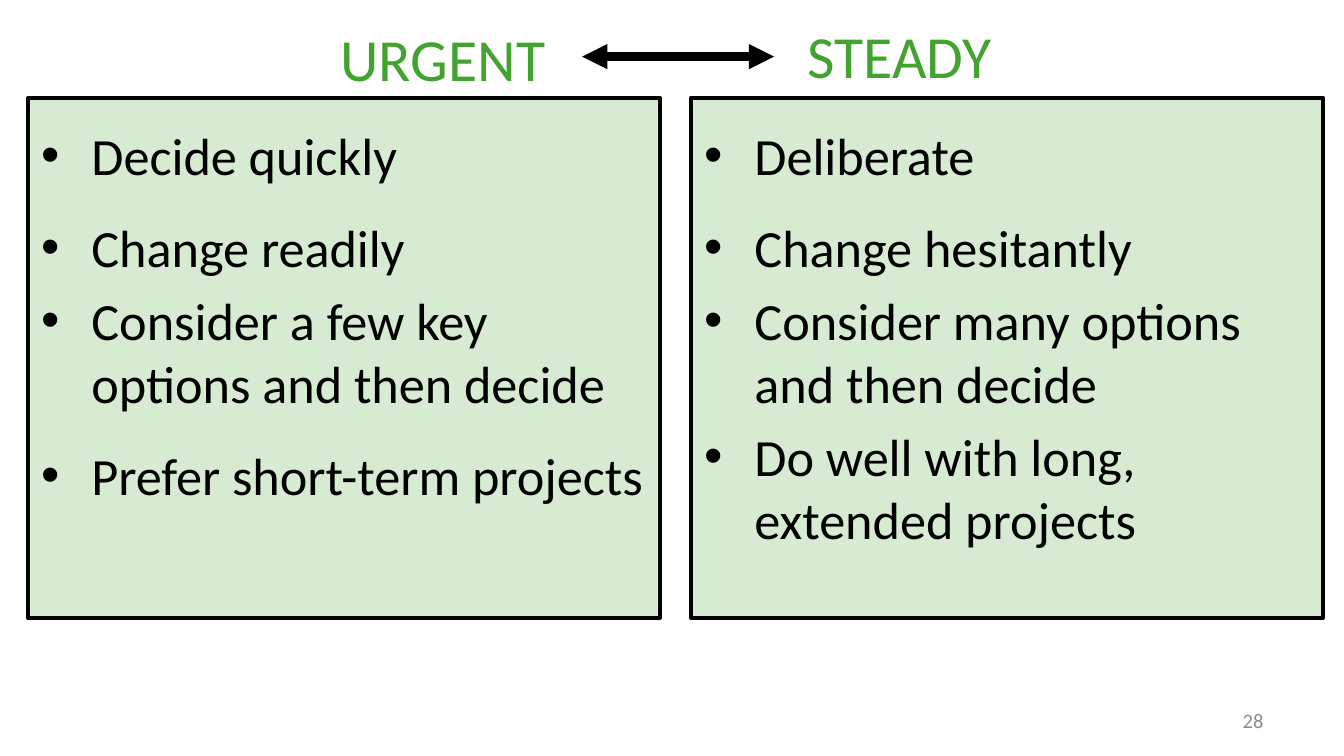
from lxml.etree import SubElement
from pptx import Presentation
from pptx.dml.color import RGBColor
from pptx.enum.shapes import MSO_CONNECTOR as Connector, MSO_SHAPE as Shape
from pptx.enum.text import MSO_ANCHOR as Anchor, PP_ALIGN as Align
from pptx.oxml.ns import qn
from pptx.util import Cm, Pt

GREEN, BLACK, GREY = "42A42F", "000000", "8C8C8C"
PANEL_LEFT, PANEL_STEP = 0.53, 12.53

# Each bullet is its wording and its line spacing.
URGENT = [
    ("Decide quickly", 1.3),
    ("Change readily", 1.3),
    ("Consider a few key options and then decide", 1.0),
    ("Prefer short-term projects", 1.3),
]
STEADY = [
    ("Deliberate", 1.3),
    ("Change hesitantly", 1.3),
    ("Consider many options and then decide", 1.0),
    ("Do well with long, extended projects", 1.0),
]


def color(value):
    """Turn a hex string into a colour."""
    return RGBColor.from_string(value)


def apply(target, formats):
    """Set each named attribute on the target."""
    for name, value in formats.items():
        setattr(target, name, value)


def add_span(para, text, size, tint):
    """Add a run of text to a paragraph."""
    span = para.add_run()
    span.text = text
    apply(span.font, {"name": "Calibri", "size": Pt(size)})
    span.font.color.rgb = color(tint)


def add_bullet(para, text, spacing, first):
    """Write one bulleted paragraph with a hanging indent."""
    props = para._p.get_or_add_pPr()
    props.set("marL", str(Cm(0.95)))
    props.set("indent", str(-Cm(0.95)))
    SubElement(props, qn("a:buFont"), typeface="Arial")
    SubElement(props, qn("a:buChar"), char="•")
    apply(para, {"alignment": Align.LEFT, "line_spacing": spacing,
                 "space_before": Pt(0 if first else 5.6)})
    add_span(para, text, 28, BLACK)


def add_panel(page, left, bullets):
    """Draw a tinted, outlined panel holding a bullet list."""
    panel = page.shapes.add_shape(
        Shape.RECTANGLE, Cm(left), Cm(1.85), Cm(11.94), Cm(9.83))
    panel.shadow.inherit = False
    panel.fill.solid()
    panel.fill.fore_color.rgb = color(GREEN)
    tint = panel.fill._xPr.find(qn("a:solidFill"))[0]
    SubElement(tint, qn("a:alpha"), val="21000")
    panel.line.color.rgb = color(BLACK)
    panel.line.width = Pt(2.25)
    frame = panel.text_frame
    apply(frame, {"word_wrap": True, "vertical_anchor": Anchor.TOP})
    for index, (text, spacing) in enumerate(bullets):
        para = frame.add_paragraph() if index else frame.paragraphs[0]
        add_bullet(para, text, spacing, index == 0)


def add_label(page, area, text, size, tint, align, anchor=Anchor.TOP):
    """Add a one-line text box; area is left, top, width, height in cm."""
    box = page.shapes.add_textbox(*map(Cm, area))
    apply(box.text_frame, {"word_wrap": True, "vertical_anchor": anchor})
    para = box.text_frame.paragraphs[0]
    para.alignment = align
    add_span(para, text, size, tint)


def add_double_arrow(page, start, end, height):
    """Draw a level line with an arrowhead at both ends."""
    arrow = page.shapes.add_connector(
        Connector.STRAIGHT, Cm(start), Cm(height), Cm(end), Cm(height))
    arrow.line.color.rgb = color(BLACK)
    arrow.line.width = Pt(4.5)
    line = arrow.line._get_or_add_ln()
    for tag in ("a:headEnd", "a:tailEnd"):
        SubElement(line, qn(tag), type="triangle")
    SubElement(arrow._element.spPr, qn("a:effectLst"))


def main():
    """Build the slide and save the deck."""
    deck = Presentation()
    apply(deck, {"slide_width": Cm(25.4), "slide_height": Cm(14.29)})
    page = deck.slides.add_slide(deck.slide_layouts[6])
    for index, bullets in enumerate((URGENT, STEADY)):
        add_panel(page, PANEL_LEFT + index * PANEL_STEP, bullets)
    add_label(page, (15.01, 0.23, 6.5, 1.63), "STEADY", 32, GREEN, Align.LEFT)
    add_label(page, (3.35, 0.28, 7.21, 1.63), "URGENT", 32, GREEN, Align.RIGHT)
    add_double_arrow(page, 11, 14.63, 1.07)
    add_label(page, (18.21, 13.23, 5.92, 0.76), "28", 11, GREY, Align.RIGHT,
              Anchor.MIDDLE)
    deck.save("out.pptx")


if __name__ == "__main__":
    main()
